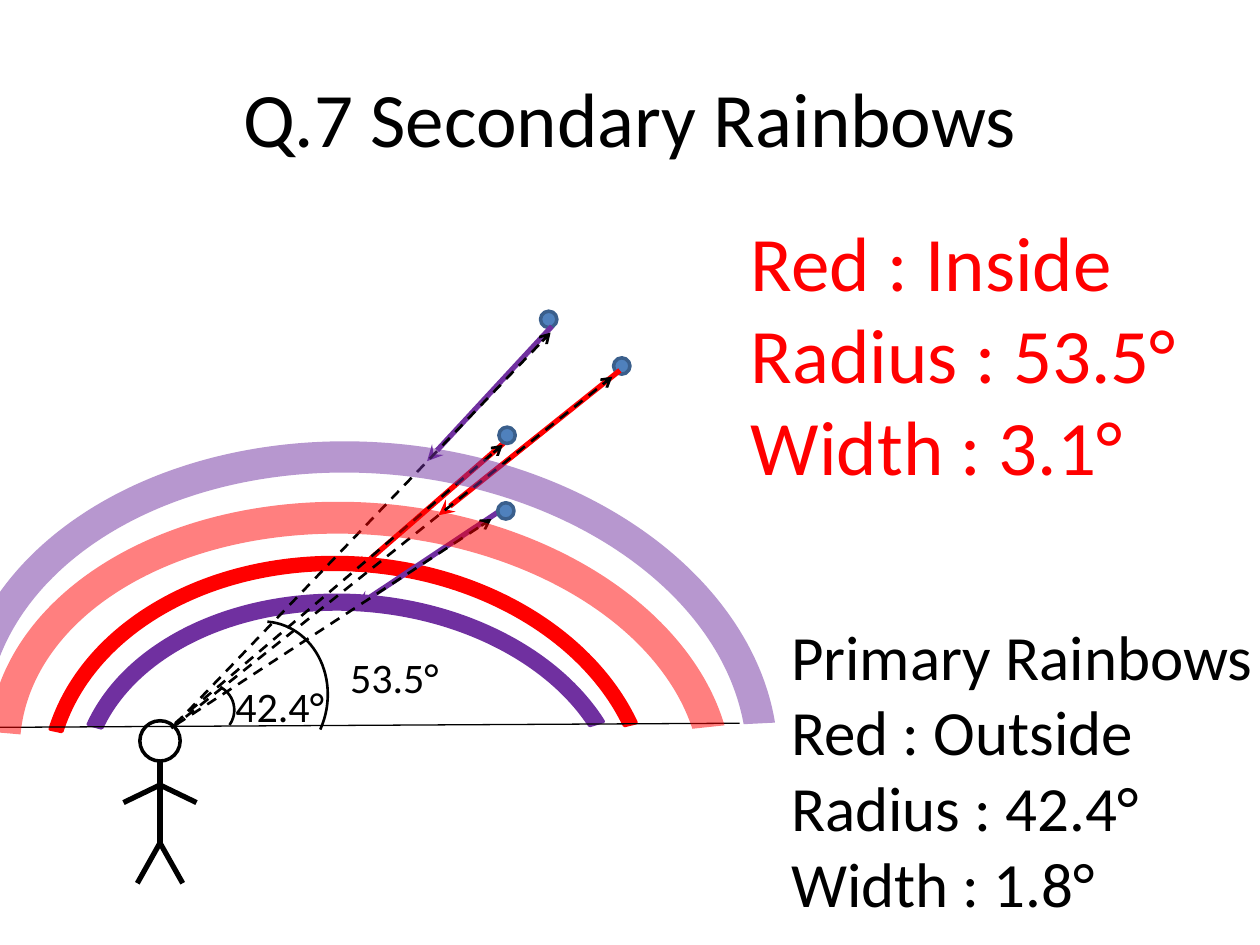
"""Build the slide that compares primary and secondary rainbows."""
import dataclasses

import lxml.etree
import pptx
import pptx.dml.color
import pptx.enum.dml
import pptx.enum.shapes
import pptx.enum.text
import pptx.oxml.ns
import pptx.util

Inches = pptx.util.Inches
Pt = pptx.util.Pt
qn = pptx.oxml.ns.qn
SHAPE = pptx.enum.shapes.MSO_SHAPE


@dataclasses.dataclass(frozen=True)
class Theme:
    font: str = "Calibri"
    black: str = "000000"
    red: str = "FF0000"
    violet: str = "7030A0"
    drop: str = "4F81BD"
    drop_edge: str = "3A5F8C"
    heading: int = 44
    notes: int = 36
    label: int = 24


theme = Theme()
rgb = pptx.dml.color.RGBColor.from_string
presentation = pptx.Presentation()
presentation.slide_width = Inches(10)
presentation.slide_height = Inches(7.5)
slide = presentation.slides.add_slide(presentation.slide_layouts[5])


def draw_shape(kind, box, fill=None, line=None, width=2, rotation=0, adjustments=(), opacity=None, flip=False):
    shape = slide.shapes.add_shape(kind, *map(Inches, box))
    shape.shadow.inherit = False
    shape.rotation = rotation
    for index, value in enumerate(adjustments):
        shape.adjustments[index] = value
    if fill:
        shape.fill.solid()
        shape.fill.fore_color.rgb = rgb(fill)
    else:
        shape.fill.background()
    if opacity:
        colour = shape.fill._xPr.find(".//" + qn("a:srgbClr"))
        lxml.etree.SubElement(colour, qn("a:alpha"), val=str(opacity * 1000))
    if line:
        shape.line.color.rgb = rgb(line)
        shape.line.width = Pt(width)
    else:
        shape.line.fill.background()
    if flip:
        shape._element.spPr.find(qn("a:xfrm")).set("flipH", "1")


def draw_line(start, end, colour=theme.black, width=3, arrow=None, dashed=False):
    connector = slide.shapes.add_connector(
        pptx.enum.shapes.MSO_CONNECTOR.STRAIGHT, *map(Inches, (*start, *end)))
    connector.line.color.rgb = rgb(colour)
    connector.line.width = Pt(width)
    if dashed:
        connector.line.dash_style = pptx.enum.dml.MSO_LINE.DASH
    if arrow:
        lxml.etree.SubElement(connector.line._ln, qn("a:tailEnd"), type=arrow)
    lxml.etree.SubElement(connector._element.spPr, qn("a:effectLst"))


title = slide.shapes.title
title.left, title.top, title.width, title.height = map(Inches, (0.5, 0.3, 9, 1.25))
title.text_frame.text = "Q.7 Secondary Rainbows"
title_font = title.text_frame.paragraphs[0].runs[0].font
title_font.name = theme.font
title_font.size = Pt(theme.heading)
title_font.color.rgb = rgb(theme.black)

tilt = 4.8
primary_bows = [
    ((0.33, 4.43, 4.87, 3.74), theme.red, (112.47, 204.8, 0.025)),
    ((0.59, 4.73, 4.41, 3.19), theme.violet, (114.36, 203.08, 0.034)),
]
for box, colour, adjustments in primary_bows:
    draw_shape(SHAPE.BLOCK_ARC, box, colour, colour, 2, tilt, adjustments)

draw_shape(SHAPE.OVAL, (1.11, 5.72, 0.32, 0.32), line=theme.black)
neck, shoulder, hip = (1.27, 6.04), (1.27, 6.23), (1.27, 6.69)
draw_line(neck, hip)
for side in (-1, 1):
    draw_line(hip, (hip[0] + side * 0.18, 7.01))
    draw_line((shoulder[0] + side * 0.29, 6.37), shoulder)

primary_light = [
    ((3.99, 4.04), (2.83, 4.81), theme.violet),
    ((4.04, 3.48), (2.82, 4.54), theme.red),
]
primary_sight = [((1.4, 5.75), (3.9, 4.12)), ((1.39, 5.74), (3.99, 3.53))]
secondary_light = [
    ((4.38, 2.59), (3.39, 3.66), theme.violet),
    ((4.92, 2.94), (3.48, 4.09), theme.red),
]
secondary_sight = [((1.39, 5.75), (4.37, 2.64)), ((1.36, 5.78), (4.86, 2.99))]

for start, end, colour in primary_light:
    draw_line(start, end, colour, arrow="stealth")
for start, end in primary_sight:
    draw_line(start, end, width=1.5, arrow="arrow", dashed=True)
for left, top in [(4.87, 2.84), (3.96, 3.39), (3.95, 3.99), (4.29, 2.47)]:
    draw_shape(SHAPE.OVAL, (left, top, 0.13, 0.13), theme.drop, theme.drop_edge)
draw_line((5.87, 5.74), (-1.32, 5.78), width=0.75)

angle_arcs = [
    ((1.46, 5, 1.21, 1.07), 99.5, (150.86, 2.4)),
    ((1.45, 5.43, 0.41, 0.41), 106.8, (150.86, 209.89)),
]
for box, rotation, adjustments in angle_arcs:
    draw_shape(SHAPE.ARC, box, None, theme.black, 1.5, rotation, adjustments, flip=True)

for start, end, colour in secondary_light:
    draw_line(start, end, colour, arrow="stealth")
for start, end in secondary_sight:
    draw_line(start, end, width=1.5, arrow="arrow", dashed=True)

secondary_bows = [
    ((-0.36, 3.51, 6.54, 4.77), theme.violet, (108.71, 211.43, 0.052)),
    ((-0.1, 3.99, 5.92, 4.15), theme.red, (108.12, 209.47, 0.061)),
]
for box, colour, adjustments in secondary_bows:
    draw_shape(SHAPE.BLOCK_ARC, box, colour, rotation=tilt, adjustments=adjustments, opacity=50)

texts = [
    ((1.77, 5.35, 1.26, 0.5), "42.4°", theme.label, theme.black, True),
    ((2.68, 5.12, 1.2, 0.5), "53.5°", theme.label, theme.black, True),
    ((5.86, 1.65, 4.02, 2.32), "Red : Inside\nRadius : 53.5°\nWidth : 3.1°",
     theme.heading, theme.red, False),
    ((6.18, 4.85, 3.9, 2.52), "Primary Rainbows\nRed : Outside\nRadius : 42.4°\nWidth : 1.8°",
     theme.notes, theme.black, False),
]
for box, wording, size, colour, wrap in texts:
    text_frame = slide.shapes.add_textbox(*map(Inches, box)).text_frame
    text_frame.word_wrap = wrap
    text_frame.auto_size = pptx.enum.text.MSO_AUTO_SIZE.SHAPE_TO_FIT_TEXT
    text_frame.text = wording
    for paragraph in text_frame.paragraphs:
        font = paragraph.runs[0].font
        font.name = theme.font
        font.size = Pt(size)
        font.color.rgb = rgb(colour)

presentation.save("out.pptx")
